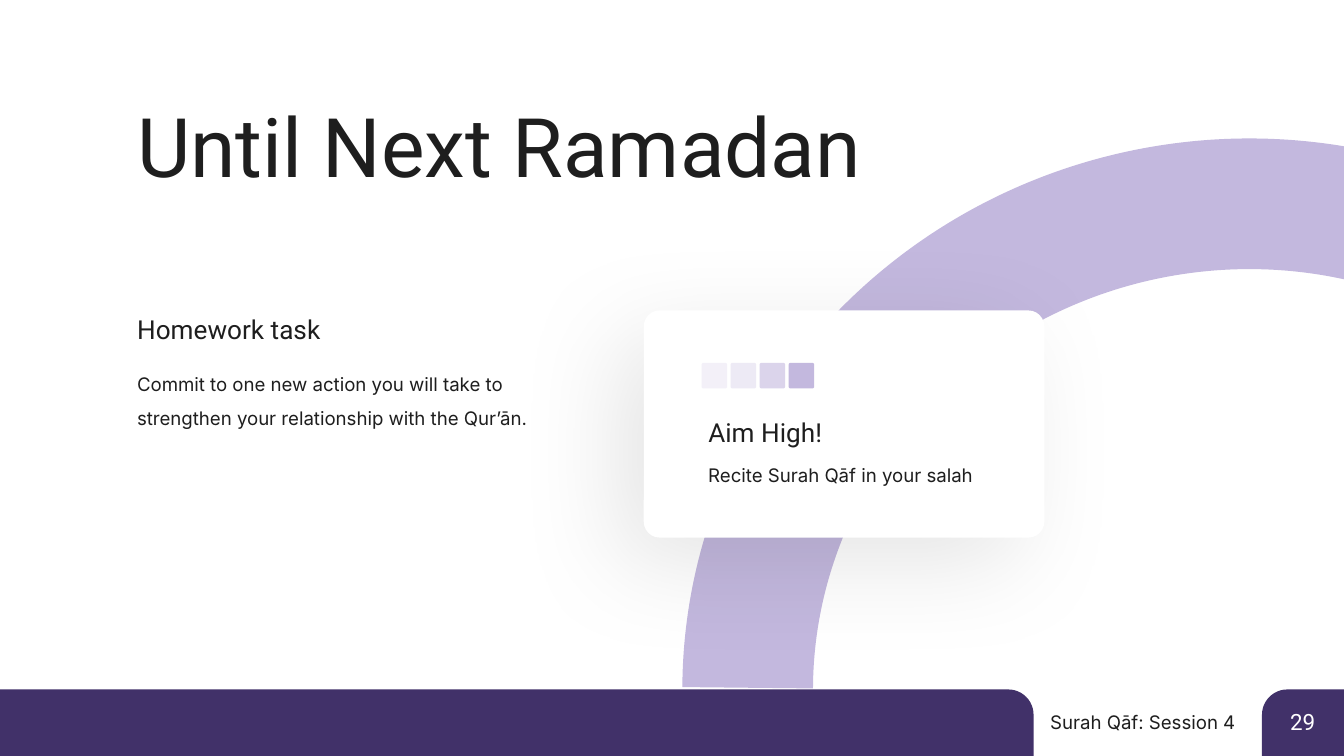
"""Build the homework slide that closes Surah Qāf session 4."""
from lxml.etree import SubElement
from pptx import Presentation
from pptx.dml.color import RGBColor
from pptx.enum.shapes import MSO_SHAPE as Preset
from pptx.enum.text import MSO_ANCHOR as Anchor, MSO_AUTO_SIZE as Fit, PP_ALIGN as Align
from pptx.oxml.ns import qn
from pptx.util import Inches, Pt

INK, WHITE, PURPLE, LILAC = "1E1E1E", "FFFFFF", "413169", "C3B8DE"

deck = Presentation()
deck.slide_width, deck.slide_height = Inches(10), Inches(5.625)
COLUMN, ROW = deck.slide_width / 100, deck.slide_height / 56.25
slide = deck.slides.add_slide(deck.slide_layouts[5])


def grid(left, top, width, height):
    return [round(n * unit) for n, unit in zip((left, top, width, height), (COLUMN, ROW) * 2)]


def paint(part, colour, alpha=100):
    part.solid()
    part.fore_color.rgb = RGBColor.from_string(colour)
    if alpha < 100:
        tint = next(part.fore_color._xFill.iter(qn("a:srgbClr")))
        SubElement(tint, qn("a:alpha"), val=str(alpha * 1000))


panels = [
    (Preset.ROUND_1_RECTANGLE, (93.9, 51.3, 6.1, 4.95), 0.38, PURPLE, 100),
    (Preset.ROUND_1_RECTANGLE, (0, 51.3, 76.9, 4.95), 0.38, PURPLE, 100),
    (Preset.ARC, (55.6, 15.2, 73.9, 71.5), None, None, 100),
    (Preset.ROUNDED_RECTANGLE, (47.9, 23.1, 29.8, 16.9), 0.07, WHITE, 100),
]
for step, alpha in enumerate((20, 29, 60, 100)):
    panels.append((Preset.ROUNDED_RECTANGLE, (52.2 + 2.16 * step, 27, 1.9, 1.9), 0.07, LILAC, alpha))

for preset, area, rounding, colour, alpha in panels:
    panel = slide.shapes.add_shape(preset, *grid(*area))
    panel.shadow.inherit = False
    if preset == Preset.ARC:
        panel.rotation = 350.2
        panel.adjustments[0], panel.adjustments[1] = 113.67, 6.76
        panel.fill.background()
        paint(panel.line.fill, LILAC)
        panel.line.width = Pt(70)
        continue
    panel.adjustments[0] = rounding
    paint(panel.fill, colour, alpha)
    panel.line.fill.background()
    if area[0] == 93.9:
        panel._element.spPr.find(qn("a:xfrm")).set("flipH", "1")
    if colour == WHITE:
        glow = SubElement(panel._element.spPr.find(qn("a:effectLst")), qn("a:outerShdw"),
                          blurRad=str(Pt(55.9)), dist=str(Pt(20)), dir=str(135 * 60000),
                          algn="ctr", rotWithShape="0")
        shade = SubElement(glow, qn("a:srgbClr"), val="000000")
        SubElement(shade, qn("a:alpha"), val="9000")

FRAME = {"word_wrap": True, "auto_size": Fit.SHAPE_TO_FIT_TEXT, "vertical_anchor": Anchor.TOP,
         "margin_left": Inches(0.05), "margin_right": Inches(0.05),
         "margin_top": Inches(0.02), "margin_bottom": Inches(0.02)}
HEADING = {"name": "Roboto", "size": Pt(14)}
BODY = {"name": "Inter", "size": Pt(10)}

wording = [
    ("Until Next Ramadan", (9.7, 6.9, 80, 7.9), HEADING | {"size": Pt(44)}, INK, 1, Align.LEFT),
    ("Homework task", (9.7, 23.1, 33.8, 2.9), HEADING, INK, 1, Align.LEFT),
    ("Commit to one new action you will take to strengthen your relationship with the Qur’ān.",
     (9.7, 26.7, 34, 4.7), BODY, INK, 1.5, Align.LEFT),
    ("Aim High!", (52.2, 30.8, 19.9, 2.9), HEADING, INK, 1, Align.LEFT),
    ("Recite Surah Qāf in your salah", (52.2, 33.5, 22, 2.2), BODY, INK, 1.5, Align.LEFT),
    ("Surah Qāf: Session 4", (74.3, 52.7, 18.1, 2.2), BODY, INK, 1, Align.RIGHT),
    ("29", (95.5, 52.5, 3, 2.5), HEADING | {"size": Pt(12)}, WHITE, 1, Align.LEFT),
]
for words, area, font, colour, spacing, align in wording:
    if words == "Until Next Ramadan":
        holder = slide.shapes.title
        holder.left, holder.top, holder.width, holder.height = grid(*area)
    else:
        holder = slide.shapes.add_textbox(*grid(*area))
    frame = holder.text_frame
    for key, value in FRAME.items():
        setattr(frame, key, value)
    frame.text = words
    line = frame.paragraphs[0]
    line.alignment, line.line_spacing = align, spacing
    for key, value in font.items():
        setattr(line.runs[0].font, key, value)
    paint(line.runs[0].font.fill, colour)

deck.save("out.pptx")
